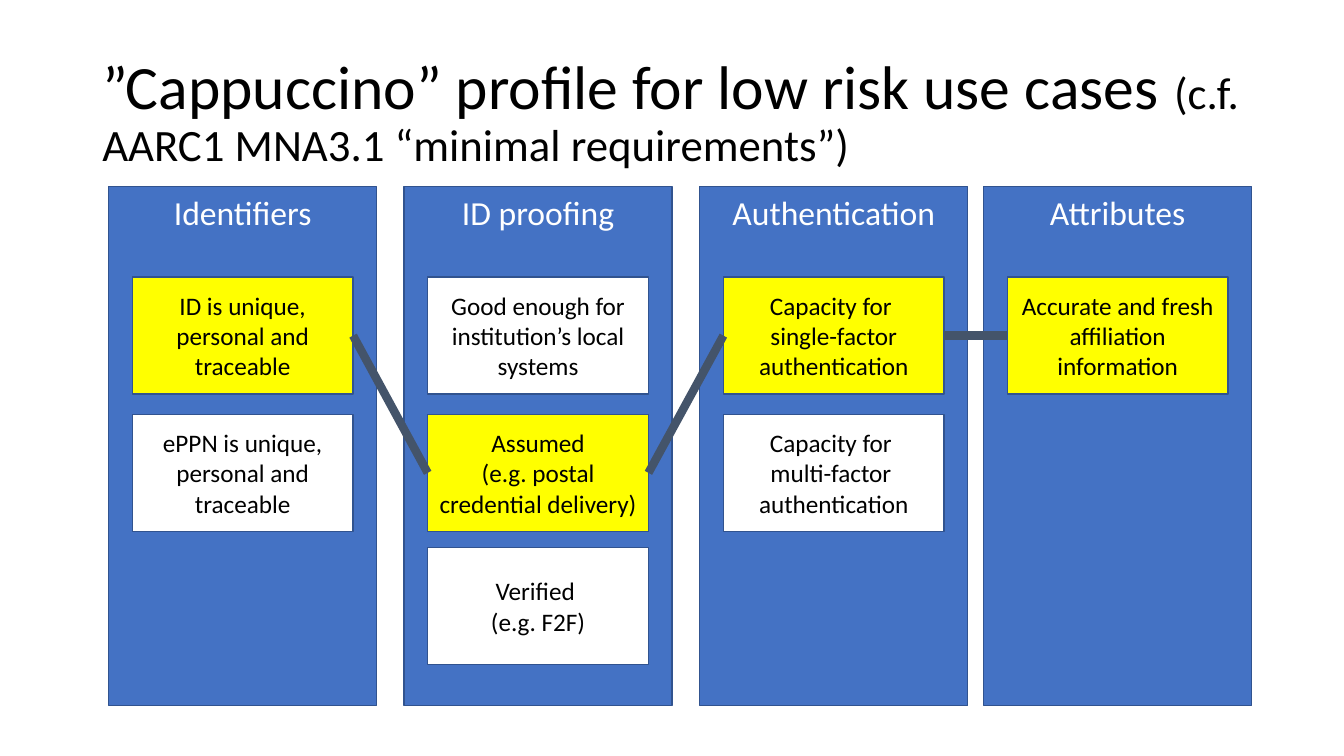
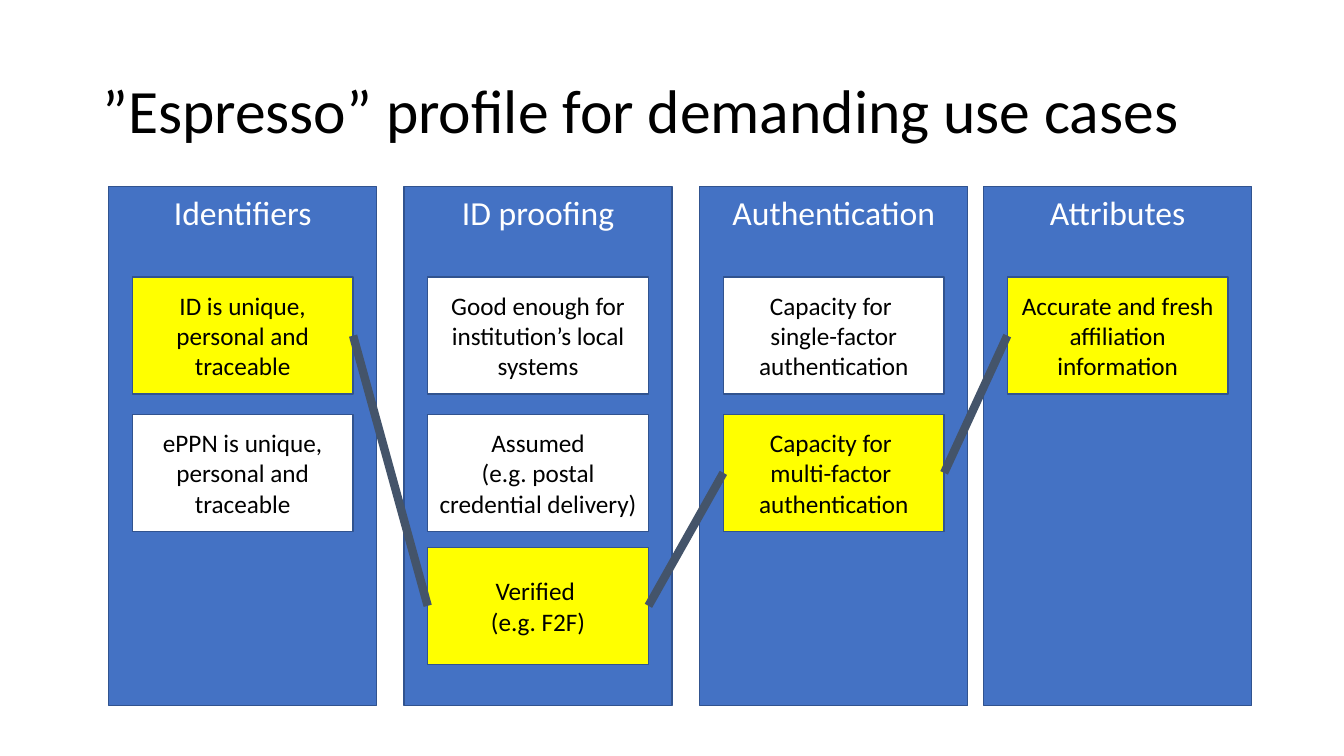
import itertools

import pptx
import pptx.dml.color
import pptx.enum.shapes
import pptx.enum.text
import pptx.oxml
import pptx.util

Pt = pptx.util.Pt
RGBColor = pptx.dml.color.RGBColor
ANCHOR = pptx.enum.text.MSO_ANCHOR
ALIGN = pptx.enum.text.PP_ALIGN

# Shared style
FONT = "Calibri"
BLACK = RGBColor(0x00, 0x00, 0x00)
WHITE = RGBColor(0xFF, 0xFF, 0xFF)
BLUE = RGBColor(0x44, 0x72, 0xC4)
OUTLINE = RGBColor(0x31, 0x53, 0x8F)
YELLOW = RGBColor(0xFF, 0xFF, 0x00)
SLATE = RGBColor(0x44, 0x54, 0x6A)

# Shared layout, in points
COLUMN_TOP, COLUMN_WIDTH, COLUMN_HEIGHT = 133.2, 191.5, 370.8
CARD_WIDTH, CARD_HEIGHT = 157.7, 83.5
CARD_INSET = (COLUMN_WIDTH - CARD_WIDTH) / 2
CARD_TOPS = (198, 296, 391)
LEFT_SIDE, RIGHT_SIDE = 1, 3

# Each column: left edge, heading, cards from top to bottom
COLUMNS = [
    (77.6, "Identifiers", [
        "ID is unique, personal and traceable",
        "ePPN is unique, personal and traceable",
    ]),
    (288.6, "ID proofing", [
        "Good enough for institution’s local systems",
        "Assumed\v(e.g. postal credential delivery)",
        "Verified \n(e.g. F2F)",
    ]),
    (499.8, "Authentication", [
        "Capacity for \vsingle-factor authentication",
        "Capacity for \vmulti-factor \vauthentication",
    ]),
    (702.6, "Attributes", [
        "Accurate and fresh affiliation information",
    ]),
]

# Each profile: title runs with sizes, and the chosen card in every column
PROFILES = [
    ([("”Cappuccino” profile for low risk use cases ", 44),
      ("(c.f. AARC1 MNA3.1 “minimal requirements”)", 32)], (0, 1, 0, 0)),
    ([("”Espresso” profile for demanding use cases", 44)], (0, 2, 1, 0)),
]


def format_run(run, size, color):
    run.font.name = FONT
    run.font.size = Pt(size)
    run.font.color.rgb = color


def add_title(slide, title_runs):
    box = slide.shapes.add_textbox(Pt(66), Pt(28.8), Pt(828), Pt(104.4))
    frame = box.text_frame
    frame.word_wrap = True
    frame.vertical_anchor = ANCHOR.MIDDLE
    paragraph = frame.paragraphs[0]
    paragraph.line_spacing = 0.9
    for text, size in title_runs:
        run = paragraph.add_run()
        run.text = text
        format_run(run, size, BLACK)


def add_box(slide, left, top, width, height, fill, text, size, color, anchor):
    box = slide.shapes.add_shape(
        pptx.enum.shapes.MSO_SHAPE.RECTANGLE,
        Pt(left), Pt(top), Pt(width), Pt(height))
    box.shadow.inherit = False
    box.fill.solid()
    box.fill.fore_color.rgb = fill
    box.line.color.rgb = OUTLINE
    box.line.width = Pt(1)
    frame = box.text_frame
    frame.word_wrap = True
    frame.vertical_anchor = anchor
    frame.text = text
    for paragraph in frame.paragraphs:
        paragraph.alignment = ALIGN.CENTER
        for run in paragraph.runs:
            format_run(run, size, color)
    return box


def add_column(slide, left, heading):
    add_box(slide, left, COLUMN_TOP, COLUMN_WIDTH, COLUMN_HEIGHT,
            BLUE, heading, 24, WHITE, ANCHOR.TOP)


def add_card(slide, column_left, top, text, chosen):
    return add_box(slide, column_left + CARD_INSET, top, CARD_WIDTH, CARD_HEIGHT,
                   YELLOW if chosen else WHITE, text, 18, BLACK, ANCHOR.MIDDLE)


def join_cards(slide, first, second):
    connector = slide.shapes.add_connector(
        pptx.enum.shapes.MSO_CONNECTOR.STRAIGHT, Pt(0), Pt(0), Pt(0), Pt(0))
    connector.begin_connect(first, RIGHT_SIDE)
    connector.end_connect(second, LEFT_SIDE)
    connector.line.color.rgb = SLATE
    connector.line.width = Pt(6)
    # An empty effect list removes the theme shadow
    connector._element.spPr.append(pptx.oxml.parse_xml(
        '<a:effectLst xmlns:a="http://schemas.openxmlformats.org/drawingml/2006/main"/>'))


def build_profile(presentation, title_runs, choices):
    slide = presentation.slides.add_slide(presentation.slide_layouts[6])
    add_title(slide, title_runs)
    for left, heading, _ in COLUMNS:
        add_column(slide, left, heading)

    # Cards, with the chosen ones highlighted
    chosen_cards = []
    for (left, _, texts), choice in zip(COLUMNS, choices):
        cards = [add_card(slide, left, top, text, row == choice)
                 for row, (top, text) in enumerate(zip(CARD_TOPS, texts))]
        chosen_cards.append(cards[choice])

    # Path through the chosen cards
    for first, second in itertools.pairwise(chosen_cards):
        join_cards(slide, first, second)


def main():
    presentation = pptx.Presentation()
    presentation.slide_width = Pt(960)
    presentation.slide_height = Pt(540)
    for title_runs, choices in PROFILES:
        build_profile(presentation, title_runs, choices)
    presentation.save("out.pptx")


if __name__ == "__main__":
    main()
